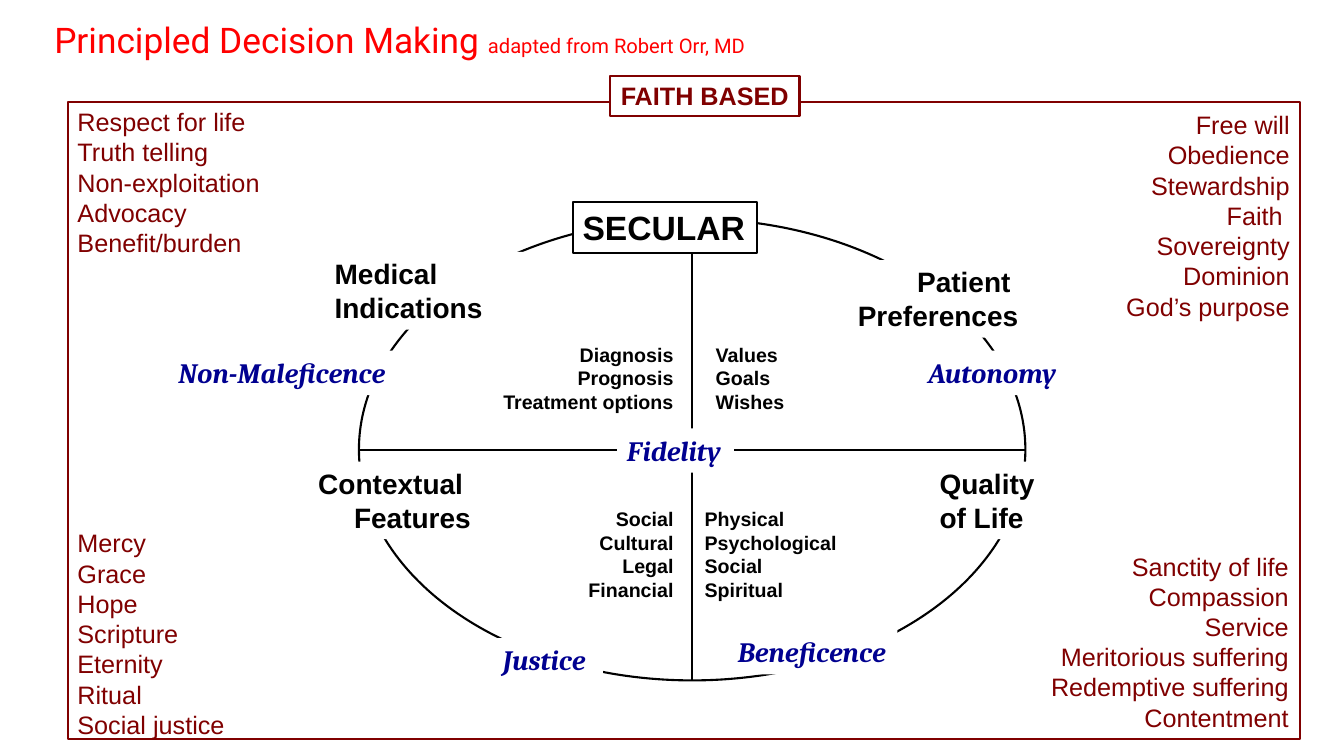
from pptx import Presentation
from pptx.dml.color import RGBColor
from pptx.enum.shapes import MSO_SHAPE
from pptx.enum.text import MSO_ANCHOR, PP_ALIGN
from pptx.util import Inches, Pt

COLORS = {
    "title": "FF0000",
    "faith": "800000",
    "secular": "000000",
    "principle": "000090",
    "paper": "FFFFFF",
}
LEFT, CENTER, RIGHT = PP_ALIGN.LEFT, PP_ALIGN.CENTER, PP_ALIGN.RIGHT


class Diagram:
    """Holds the slide being drawn and its shared style."""

    def __init__(self, slide, font="Arial", line_width=1.5):
        self.slide = slide
        self.font = font
        self.line_width = line_width

    def color(self, name):
        return RGBColor.from_string(COLORS[name])

    def style_run(self, run, size, color, bold=False, italic=False, font=None):
        run.font.name = font or self.font
        run.font.size = Pt(size)
        run.font.bold = bold
        run.font.italic = italic
        run.font.color.rgb = self.color(color)

    def set_lines(self, frame, lines, align, anchor, wrap, **style):
        frame.word_wrap = wrap
        frame.vertical_anchor = anchor
        frame.text = "\n".join(lines)
        for paragraph in frame.paragraphs:
            paragraph.alignment = align
            for run in paragraph.runs:
                self.style_run(run, **style)

    def shape(self, kind, box, fill=None, line=None):
        shape = self.slide.shapes.add_shape(kind, *map(Inches, box))
        shape.shadow.inherit = False
        if fill:
            shape.fill.solid()
            shape.fill.fore_color.rgb = self.color(fill)
        else:
            shape.fill.background()
        if line:
            shape.line.color.rgb = self.color(line)
            shape.line.width = Pt(self.line_width)
        else:
            shape.line.fill.background()
        return shape

    def label(self, box, lines, align=LEFT, line=None, wrap=False, **style):
        """White box that covers the lines behind its bold text."""
        label = self.shape(MSO_SHAPE.RECTANGLE, box, "paper", line)
        self.set_lines(label.text_frame, lines, align, MSO_ANCHOR.TOP, wrap,
                       bold=True, **style)

    def word_list(self, box, lines, align, **style):
        words = self.slide.shapes.add_textbox(*map(Inches, box))
        self.set_lines(words.text_frame, lines, align, MSO_ANCHOR.MIDDLE, True,
                       **style)

    def title(self, box, heading, credit):
        title = self.slide.shapes.add_textbox(*map(Inches, box))
        frame = title.text_frame
        self.set_lines(frame, [heading], LEFT, MSO_ANCHOR.MIDDLE, True,
                       size=25.2, color="title", font="Roboto")
        paragraph = frame.paragraphs[0]
        paragraph.line_spacing = 0.9
        credit_run = paragraph.add_run()
        credit_run.text = credit
        self.style_run(credit_run, 14.4, "title", font="Roboto")


FAITH_VALUES = [
    ((9.8, 5.4, 3.08, 1.93), RIGHT,
     ["Sanctity of life", "Compassion", "Service", "Meritorious suffering",
      "Redemptive suffering", "Contentment"]),
    ((0.67, 5.32, 1.94, 1.93), LEFT,
     ["Mercy", "Grace", "Hope", "Scripture", "Eternity", "Ritual",
      "Social justice"]),
    ((0.67, 1, 3.08, 1.61), LEFT,
     ["Respect for life", "Truth telling", "Non-exploitation", "Advocacy",
      "Benefit/burden"]),
    ((9.46, 1.01, 3.43, 2.25), RIGHT,
     ["Free will", "Obedience", "Stewardship", "Faith ", "Sovereignty",
      "Dominion", "God’s purpose"]),
]
CONSIDERATIONS = [
    (4.78, 3.25, RIGHT, ["Diagnosis", "Prognosis", "Treatment options"]),
    (7, 3.25, LEFT, ["Values", "Goals", "Wishes"]),
    (4.78, 5, RIGHT, ["Social", "Cultural", "Legal", "Financial"]),
    (6.89, 5, LEFT, ["Physical", "Psychological", "Social", "Spiritual"]),
]
QUADRANTS = [
    (7.64, 2.58, 2.56, RIGHT, ["Patient ", "Preferences"]),
    (2.33, 4.58, 2.44, RIGHT, ["Contextual ", "Features"]),
    (3.22, 2.5, 2.33, LEFT, ["Medical", "Indications"]),
    (9.22, 4.58, 1.56, LEFT, ["Quality ", "of Life"]),
]
PRINCIPLES = [
    (1.67, 3.48, 2.27, "Non-Maleficence"),
    (7.22, 6.25, 1.68, "Beneficence"),
    (4.89, 6.33, 1.09, "Justice"),
    (9.11, 3.48, 1.48, "Autonomy"),
    (6.12, 4.25, 1.16, "Fidelity"),
]


def main():
    deck = Presentation()
    deck.slide_width, deck.slide_height = Inches(13.33), Inches(7.5)
    diagram = Diagram(deck.slides.add_slide(deck.slide_layouts[6]))

    diagram.title((0.44, 0.17, 12, 0.5), "Principled Decision Making ",
                  "adapted from Robert Orr, MD")

    diagram.shape(MSO_SHAPE.RECTANGLE, (0.67, 1.01, 12.22, 6.32), line="faith")
    for box, align, values in FAITH_VALUES:
        diagram.word_list(box, values, align, size=18, color="faith")
    diagram.label((6.05, 0.75, 1.88, 0.4), ["FAITH BASED"], CENTER, "faith",
                  size=18, color="faith")

    diagram.shape(MSO_SHAPE.FLOWCHART_OR, (3.56, 2.17, 6.61, 4.58), line="secular")
    diagram.label((5.68, 2, 1.83, 0.51), ["SECULAR"], line="secular",
                  size=24, color="secular")
    for left, top, align, topics in CONSIDERATIONS:
        diagram.word_list((left, top, 2, 1), topics, align,
                          size=14, color="secular", bold=True)
    for left, top, width, align, name in QUADRANTS:
        diagram.label((left, top, width, 0.77), name, align, wrap=True,
                      size=20, color="secular")

    for left, top, width, principle in PRINCIPLES:
        diagram.label((left, top, width, 0.44), [principle], size=20,
                      color="principle", italic=True, font="Cambria")

    deck.save("out.pptx")


if __name__ == "__main__":
    main()
